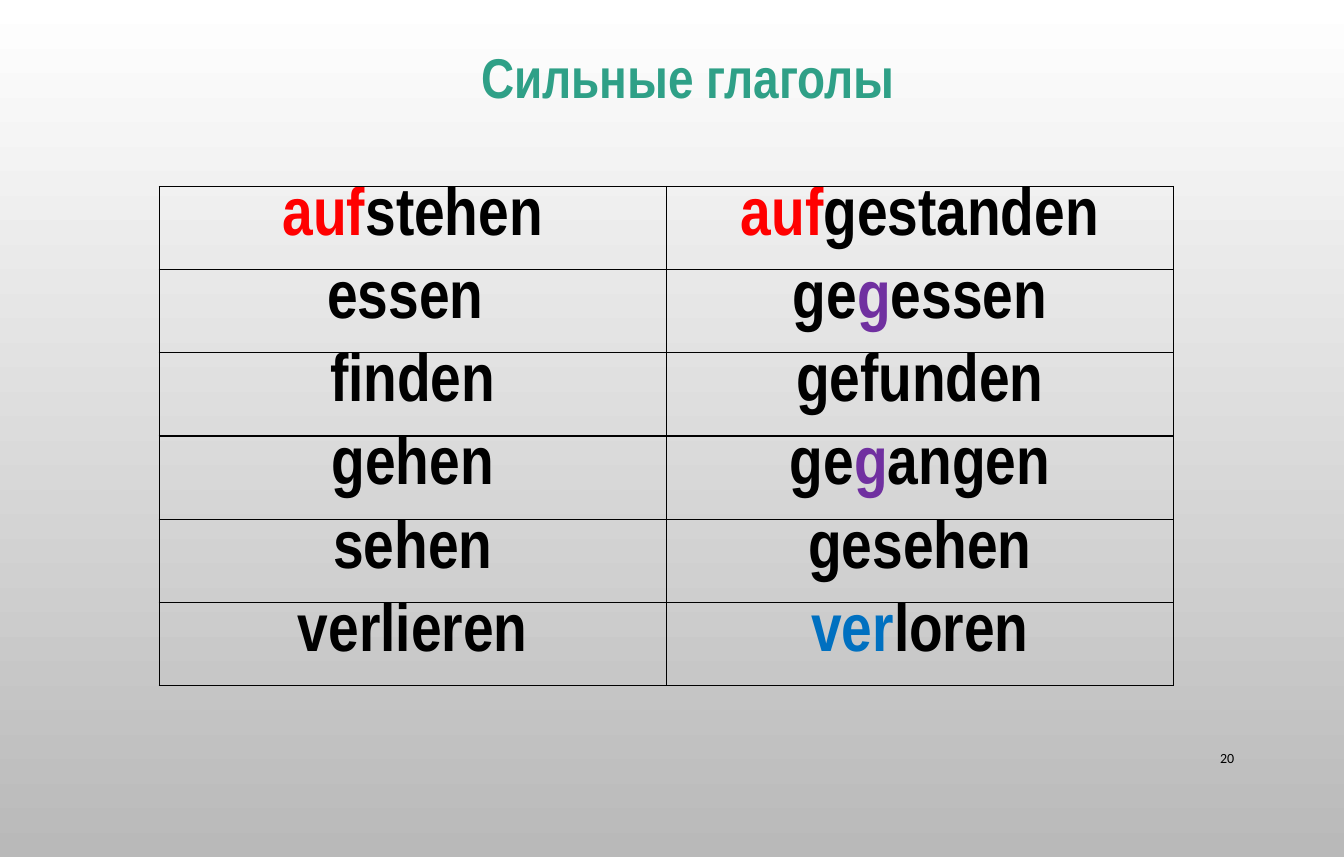
"""Build a slide with a table of German strong verbs."""
import pptx
import pptx.dml.color
import pptx.enum.text
import pptx.util
from lxml import etree

Inches = pptx.util.Inches
Pt = pptx.util.Pt
RGB = pptx.dml.color.RGBColor
ALIGN = pptx.enum.text.PP_ALIGN
MIDDLE = pptx.enum.text.MSO_ANCHOR.MIDDLE

BLACK = RGB(0, 0, 0)
WHITE = RGB(255, 255, 255)
GRAY = RGB(0xB9, 0xB9, 0xB9)
GREEN = RGB(0x2F, 0xA0, 0x87)
RED = RGB(255, 0, 0)
VIOLET = RGB(0x70, 0x30, 0xA0)
BLUE = RGB(0x00, 0x70, 0xC0)

VERBS = [
    ([("auf", RED), ("stehen", BLACK)], [("auf", RED), ("gestanden", BLACK)]),
    ([("essen ", BLACK)], [("ge", BLACK), ("g", VIOLET), ("essen", BLACK)]),
    ([("finden", BLACK)], [("gefunden", BLACK)]),
    ([("gehen", BLACK)], [("ge", BLACK), ("g", VIOLET), ("angen", BLACK)]),
    ([("sehen", BLACK)], [("gesehen", BLACK)]),
    ([("verlieren", BLACK)], [("ver", BLUE), ("loren", BLACK)]),
]


class Page:
    face = "Arial Narrow"

    def __init__(self, deck):
        self.slide = deck.slides.add_slide(deck.slide_layouts[5])

    def shade(self, top, bottom):
        fill = self.slide.background.fill
        fill.gradient()
        fill.gradient_angle = 270
        for stop, color in zip(fill.gradient_stops, (top, bottom)):
            stop.color.rgb = color

    def style(self, para, size, align, face, bold, color=None):
        para.alignment = align
        font = para.font
        font.name, font.size, font.bold = face, Pt(size), bold
        if color is not None:
            font.color.rgb = color

    def title(self, text, left, top, width, height):
        box = self.slide.shapes.title
        box.left, box.top = Inches(left), Inches(top)
        box.width, box.height = Inches(width), Inches(height)
        frame = box.text_frame
        frame.text = text
        frame.vertical_anchor = MIDDLE
        para = frame.paragraphs[0]
        para.line_spacing = 0.9
        self.style(para, 40, ALIGN.CENTER, self.face, True, GREEN)

    def label(self, text, left, top, width, height):
        box = self.slide.shapes.add_textbox(
            Inches(left), Inches(top), Inches(width), Inches(height))
        frame = box.text_frame
        frame.word_wrap = True
        frame.vertical_anchor = MIDDLE
        frame.text = text
        self.style(frame.paragraphs[0], 10, ALIGN.RIGHT, "Calibri", False, BLACK)

    def border(self, cell):
        props = cell._tc.get_or_add_tcPr()
        for side in ("L", "R", "T", "B"):
            props.append(pptx.oxml.parse_xml(
                f'<a:ln{side} xmlns:a="http://schemas.openxmlformats.org/drawingml/2006/main" '
                f'w="{Pt(1)}"><a:solidFill><a:srgbClr val="{BLACK}"/></a:solidFill></a:ln{side}>'))

    def fill_cell(self, cell, parts):
        self.border(cell)
        cell.fill.background()
        cell.margin_top = cell.margin_bottom = 0
        para = cell.text_frame.paragraphs[0]
        for text, color in parts:
            run = para.add_run()
            run.text = text
            run.font.color.rgb = color
        self.style(para, 48, ALIGN.CENTER, self.face, True)

    def table(self, rows, left, top, width, height):
        table = self.slide.shapes.add_table(
            len(rows), len(rows[0]), Inches(left), Inches(top),
            Inches(width), Inches(height)).table
        table.first_row = table.horz_banding = False
        for r, row in enumerate(rows):
            for c, parts in enumerate(row):
                self.fill_cell(table.cell(r, c), parts)


def main():
    deck = pptx.Presentation()
    deck.slide_width, deck.slide_height = Inches(13.33), Inches(8.5)
    page = Page(deck)
    page.shade(WHITE, GRAY)
    page.title(" Сильные глаголы", 3.37, 0.44, 6.78, 0.72)
    page.table(VERBS, 1.58, 1.85, 10.06, 4.95)
    page.label("20", 11.5, 7.29, 0.84, 0.45)
    deck.save("out.pptx")


if __name__ == "__main__":
    main()
